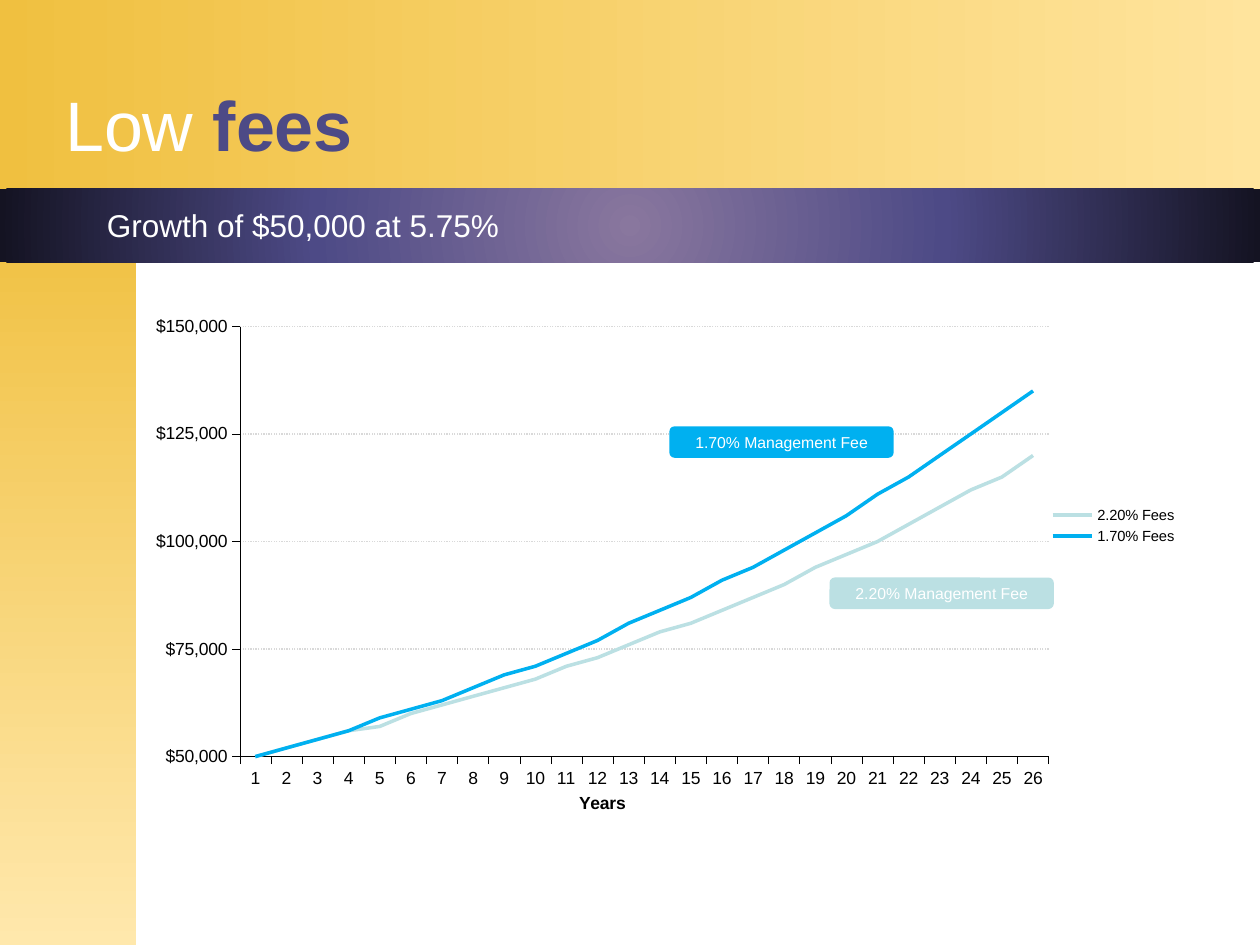
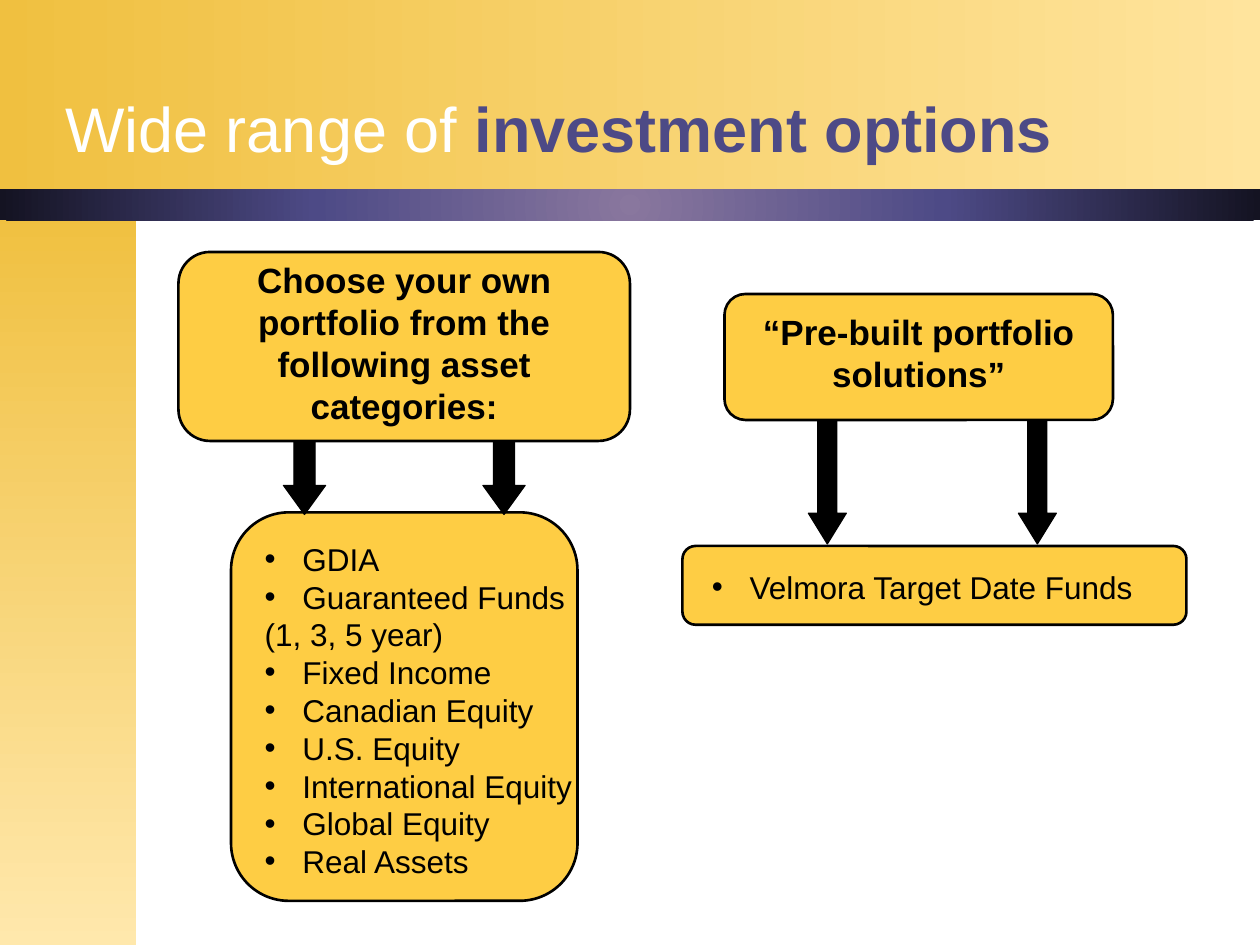
from dataclasses import dataclass

from lxml.etree import SubElement
from pptx import Presentation
from pptx.chart.data import CategoryChartData
from pptx.dml.color import RGBColor
from pptx.enum.chart import XL_CHART_TYPE, XL_LEGEND_POSITION, XL_TICK_MARK
from pptx.enum.dml import MSO_LINE
from pptx.enum.shapes import MSO_SHAPE
from pptx.enum.text import MSO_ANCHOR, MSO_AUTO_SIZE, PP_ALIGN
from pptx.oxml.ns import qn
from pptx.util import Inches, Pt

# Shared look
FONT = "Arial"
WHITE = RGBColor(0xFF, 0xFF, 0xFF)
BLACK = RGBColor(0, 0, 0)
GOLD = RGBColor(0xF0, 0xC0, 0x40)
GOLD_LIGHT = RGBColor(0xFF, 0xE4, 0x9D)
GOLD_PALE = RGBColor(0xFF, 0xE8, 0xAC)
PANEL_GOLD = RGBColor(0xFE, 0xCD, 0x44)
VIOLET = RGBColor(0x4D, 0x4A, 0x86)
VIOLET_LIGHT = RGBColor(0x89, 0x77, 0x9E)
NIGHT = RGBColor(0x14, 0x13, 0x22)
GRID_GREY = RGBColor(0xD9, 0xD9, 0xD9)
SKY = RGBColor(0, 0xB0, 0xF0)
MIST = RGBColor(0xBB, 0xE0, 0xE3)

# The slide is a grid of 120 columns by 90 rows
COLUMNS, ROWS = 120, 90
CELL = Inches(10) / COLUMNS
HEADER_ROWS, SIDE_TOP, SIDE_COLUMNS = 18, 20, 13


@dataclass(frozen=True)
class Area:
    """A rectangle in grid columns and rows."""
    left: float
    top: float
    width: float
    height: float

    def lengths(self) -> tuple[int, ...]:
        return tuple(round(n * CELL) for n in (self.left, self.top, self.width, self.height))


@dataclass(frozen=True)
class Fee:
    rate: float
    color: RGBColor
    tag: Area

    @property
    def label(self) -> str:
        return f"{self.rate:.2f}%"


@dataclass(frozen=True)
class Arrows:
    columns: tuple[float, float]
    top: float
    width: float
    height: float
    head: float


def add_box(page, area: Area, color=None, kind=MSO_SHAPE.RECTANGLE, border=0.0):
    box = page.shapes.add_shape(kind, *area.lengths())
    box.shadow.inherit = False
    if color is not None:
        box.fill.solid()
        box.fill.fore_color.rgb = color
    if border:
        box.line.color.rgb = BLACK
        box.line.width = Pt(border)
    else:
        box.line.fill.background()
    return box


def add_gradient(page, area: Area, colors, angle: int = 0, radial: bool = False) -> None:
    """Draw a band whose colours are evenly spaced along its gradient."""
    box = add_box(page, area)
    box.fill.gradient()
    gradient = box._element.spPr.find(qn("a:gradFill"))
    for child in list(gradient):
        gradient.remove(child)
    stops = SubElement(gradient, qn("a:gsLst"))
    for index, color in enumerate(colors):
        stop = SubElement(stops, qn("a:gs"), pos=str(100000 * index // (len(colors) - 1)))
        SubElement(stop, qn("a:srgbClr"), val=str(color))
    if radial:
        route = SubElement(gradient, qn("a:path"), path="circle")
        SubElement(route, qn("a:fillToRect"), l="50000", t="50000", r="50000", b="50000")
    else:
        SubElement(gradient, qn("a:lin"), ang=str(angle * 60000), scaled="0")


def format_font(font, size: float, color=BLACK, bold: bool = False) -> None:
    font.name, font.size, font.bold = FONT, Pt(size), bold
    font.color.rgb = color


def add_span(para, text: str, **style) -> None:
    span = para.add_run()
    span.text = text
    format_font(span.font, **style)


def write(frame, text: str, *, align=PP_ALIGN.LEFT, bullet: bool = False, **style) -> None:
    """Add one paragraph, using the empty first one when there is one."""
    first = frame.paragraphs[0]
    para = frame.add_paragraph() if first.runs else first
    para.alignment = align
    para.space_before = Pt(0)
    para.line_spacing = Pt(1.2 * style["size"])
    properties = para._p.get_or_add_pPr()
    indent = Inches(0.3) if bullet else 0
    properties.set("marL", str(indent))
    properties.set("indent", str(-indent))
    if bullet:
        SubElement(properties, qn("a:buFont"), typeface=FONT)
        SubElement(properties, qn("a:buChar"), char="•")
    else:
        SubElement(properties, qn("a:buNone"))
    add_span(para, text, **style)


def add_label(page, area: Area, text: str, **style) -> None:
    frame = page.shapes.add_textbox(*area.lengths()).text_frame
    frame.word_wrap = True
    write(frame, text, **style)


def place(page, holder, area: Area, anchor):
    """Move a placeholder, bring it to the front and return its text frame."""
    holder.left, holder.top, holder.width, holder.height = area.lengths()
    page.shapes._spTree.append(holder._element)
    frame = holder.text_frame
    frame.word_wrap = True
    frame.auto_size = MSO_AUTO_SIZE.NONE
    frame.vertical_anchor = anchor
    return frame


def add_page(deck, layout: int, plain: str, strong: str, size: int, band_rows: float):
    """Add a slide with the shared bands and a two-tone title."""
    page = deck.slides.add_slide(deck.slide_layouts[layout])
    add_gradient(page, Area(0, 0, COLUMNS, HEADER_ROWS), (GOLD, GOLD_LIGHT))
    add_gradient(page, Area(0, SIDE_TOP, SIDE_COLUMNS, ROWS - SIDE_TOP), (GOLD, GOLD_PALE), angle=90)
    add_gradient(page, Area(0, HEADER_ROWS, COLUMNS, band_rows),
                 (VIOLET_LIGHT, VIOLET, NIGHT), radial=True)
    frame = place(page, page.shapes.title, Area(5, 0, 102, 16.32), MSO_ANCHOR.BOTTOM)
    para = frame.paragraphs[0]
    para.alignment = PP_ALIGN.LEFT
    add_span(para, plain, size=size, color=WHITE)
    add_span(para, strong, size=size, color=VIOLET, bold=True)
    return page


# Fee slide
START, RETURN_RATE, YEARS = 50000, 5.75, 26
FEES = (
    Fee(2.20, MIST, Area(79, 55, 21.36, 3)),
    Fee(1.70, SKY, Area(63.75, 40.6, 21.36, 3)),
)


def growth(fee: Fee) -> list[int]:
    """Yearly balance after the fee, to the nearest thousand."""
    factor = 1 + (RETURN_RATE - fee.rate) / 100
    return [round(START * factor ** year, -3) for year in range(YEARS)]


def format_axis(axis) -> None:
    axis.major_tick_mark = XL_TICK_MARK.OUTSIDE
    axis.minor_tick_mark = XL_TICK_MARK.NONE
    axis.format.line.color.rgb = BLACK
    axis.format.line.width = Pt(0.25)
    format_font(axis.tick_labels.font, 10)


def add_growth_chart(page) -> None:
    data = CategoryChartData()
    data.categories = [str(year + 1) for year in range(YEARS)]
    for fee in FEES:
        data.add_series(f"{fee.label} Fees", growth(fee))
    chart = page.shapes.add_chart(XL_CHART_TYPE.LINE, *Area(13, 22.1, 100.32, 55.9).lengths(), data).chart
    format_font(chart.font, 10)
    chart.has_title = False
    chart.has_legend = True
    chart.legend.position = XL_LEGEND_POSITION.RIGHT
    chart.legend.include_in_layout = False
    format_font(chart.legend.font, 8.4)

    years, dollars = chart.category_axis, chart.value_axis
    for axis in (years, dollars):
        format_axis(axis)
    years.has_major_gridlines = False
    para = years.axis_title.text_frame.paragraphs[0]
    add_span(para, "Years", size=10, bold=True)
    dollars.minimum_scale, dollars.maximum_scale, dollars.major_unit = START, 150000, 25000
    dollars.tick_labels.number_format = '"$"#,##0'
    dollars.tick_labels.number_format_is_linked = False
    grid_line = dollars.major_gridlines.format.line
    grid_line.color.rgb = GRID_GREY
    grid_line.width = Pt(0.75)
    grid_line.dash_style = MSO_LINE.ROUND_DOT

    plot = chart.plots[0]
    plot.vary_by_categories = False
    for series, fee in zip(plot.series, FEES):
        series.smooth = False
        series.format.line.color.rgb = fee.color
        series.format.line.width = Pt(2)

    # Fixed inner plot area, as shares of the chart
    plot_area = chart._chartSpace.chart.plotArea
    layout = plot_area.find(qn("c:layout"))
    if layout is None:
        layout = SubElement(plot_area, qn("c:layout"))
        plot_area.insert(0, layout)
    manual = SubElement(layout, qn("c:manualLayout"))
    settings = {"layoutTarget": "inner", "xMode": "edge", "yMode": "edge",
                "x": 0.098, "y": 0.161, "w": 0.768, "h": 0.733}
    for name, value in settings.items():
        SubElement(manual, qn(f"c:{name}"), val=str(value))


def build_fee_page(deck) -> None:
    page = add_page(deck, 5, "Low ", "fees", 40, 7)
    add_label(page, Area(9, 19, 63, 4.8), "Growth of $50,000 at 5.75%", size=18, color=WHITE)
    add_growth_chart(page)
    for fee in FEES:
        tag = add_box(page, fee.tag, fee.color, MSO_SHAPE.ROUNDED_RECTANGLE)
        frame = tag.text_frame
        frame.margin_top = frame.margin_bottom = 0
        frame.vertical_anchor = MSO_ANCHOR.MIDDLE
        write(frame, f"{fee.label} Management Fee", align=PP_ALIGN.CENTER, size=9, color=WHITE)


# Options slide
ASSETS = ("GDIA", "Guaranteed Funds", "(1, 3, 5 year)", "Fixed Income", "Canadian Equity",
          "U.S. Equity", "International Equity", "Global Equity", "Real Assets")
LISTS = (
    (Area(22, 48.8, 33, 37), Area(24, 50.8, 32, 34), ASSETS),
    (Area(65, 52, 48, 7.5), Area(66.6, 53.5, 48, 4.8), ("Velmora Target Date Funds",)),
)
HEADS = (
    (Area(17, 24, 43, 18), Area(20, 24, 37, 17.2),
     "Choose your own portfolio from the following asset categories:"),
    (Area(69, 28, 37, 12), Area(69, 29, 37, 9.2), "“Pre-built portfolio solutions”"),
)
ARROWS = (Arrows((27, 46), 38, 4, 11, 0.69), Arrows((77, 97), 40, 3.6, 11.8, 0.81))


def add_panel(page, area: Area) -> None:
    add_box(page, area, PANEL_GOLD, MSO_SHAPE.FLOWCHART_ALTERNATE_PROCESS, border=1.5)


def build_options_page(deck) -> None:
    page = add_page(deck, 3, "Wide range of ", "investment options", 36, 3)
    holders = [holder for holder in page.placeholders if holder.placeholder_format.idx]
    for holder, (panel, text_area, items) in zip(holders, LISTS):
        add_panel(page, panel)
        frame = place(page, holder, text_area, MSO_ANCHOR.TOP)
        for item in items:
            write(frame, item, bullet=not item.startswith("("), size=18)
    for pair in ARROWS:
        for column in pair.columns:
            arrow = add_box(page, Area(column, pair.top, pair.width, pair.height), BLACK,
                            MSO_SHAPE.DOWN_ARROW, border=0.75)
            arrow.adjustments[0], arrow.adjustments[1] = 0.5, pair.head
    for panel, text_area, text in HEADS:
        add_panel(page, panel)
        add_label(page, text_area, text, align=PP_ALIGN.CENTER, size=20, bold=True)


def main() -> None:
    deck = Presentation()
    deck.slide_width, deck.slide_height = round(COLUMNS * CELL), round(ROWS * CELL)
    build_fee_page(deck)
    build_options_page(deck)
    deck.save("out.pptx")


if __name__ == "__main__":
    main()
